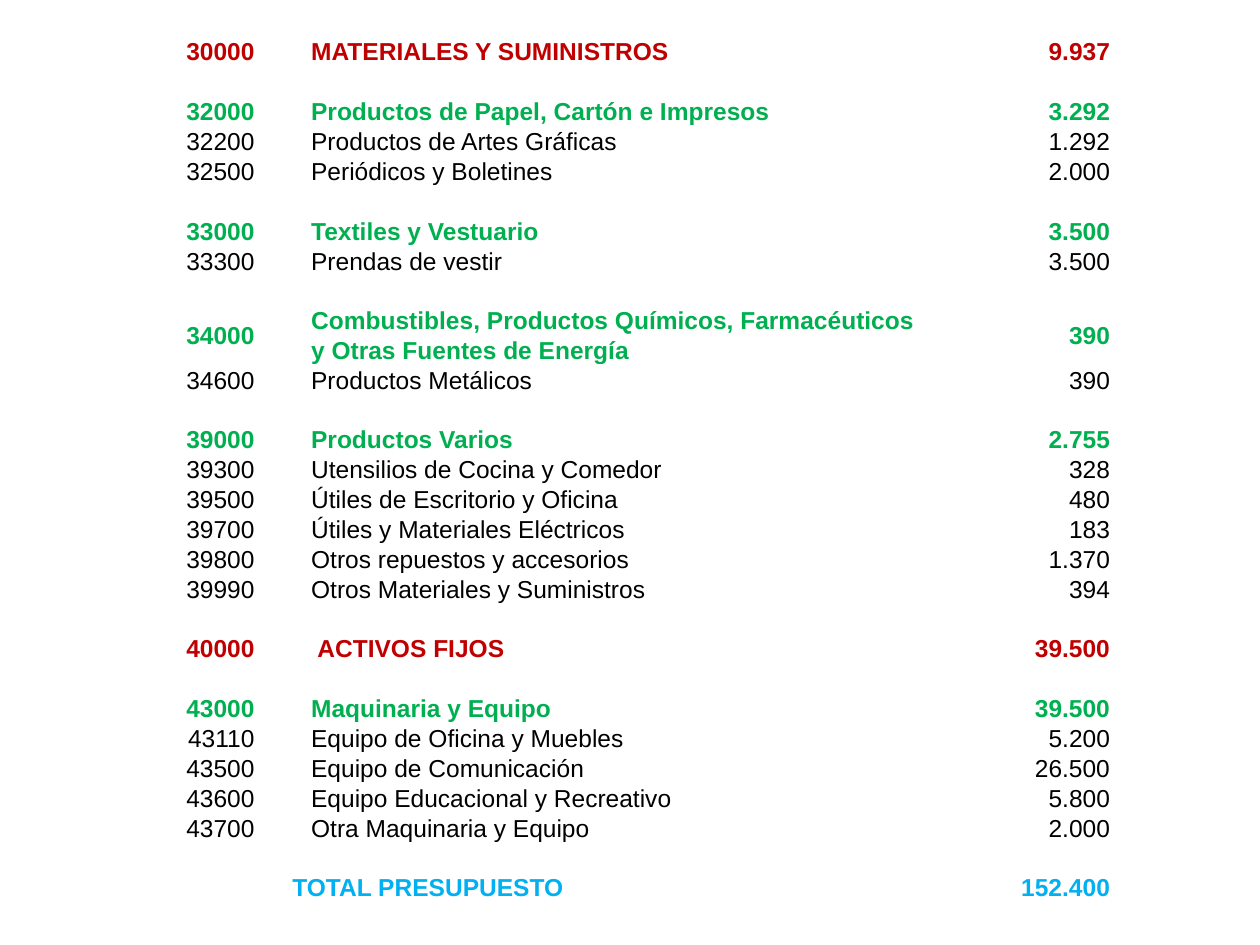
"""Build a budget slide with one table of accounts and amounts."""
import pptx
import pptx.util
import pptx.dml.color
import pptx.enum.text
import pptx.oxml.ns
from lxml import etree

Inches = pptx.util.Inches
Pt = pptx.util.Pt
RGBColor = pptx.dml.color.RGBColor
ALIGN = pptx.enum.text.PP_ALIGN

RED = RGBColor(0xC0, 0x00, 0x00)
GREEN = RGBColor(0x00, 0xB0, 0x50)
BLUE = RGBColor(0x00, 0xB0, 0xF0)
BLACK = RGBColor(0x00, 0x00, 0x00)

WIDTHS = [0.92, 0.37, 4.93, 1.49]
PAD = 0.04
LINE = Pt(17)
TALL = "34000"

GROUPS = [
    [("30000", "MATERIALES Y SUMINISTROS", "9.937")],
    [("32000", "Productos de Papel, Cartón e Impresos", "3.292"),
     ("32200", "Productos de Artes Gráficas", "1.292"),
     ("32500", "Periódicos y Boletines", "2.000")],
    [("33000", "Textiles y Vestuario", "3.500"),
     ("33300", "Prendas de vestir", "3.500")],
    [(TALL, "Combustibles, Productos Químicos, Farmacéuticos "
      "y Otras Fuentes de Energía", "390"),
     ("34600", "Productos Metálicos", "390")],
    [("39000", "Productos Varios", "2.755"),
     ("39300", "Utensilios de Cocina y Comedor", "328"),
     ("39500", "Útiles de Escritorio y Oficina", "480"),
     ("39700", "Útiles y Materiales Eléctricos", "183"),
     ("39800", "Otros repuestos y accesorios", "1.370"),
     ("39990", "Otros Materiales y Suministros", "394")],
    [("40000", "ACTIVOS FIJOS", "39.500")],
    [("43000", "Maquinaria y Equipo", "39.500"),
     ("43110", "Equipo de Oficina y Muebles", "5.200"),
     ("43500", "Equipo de Comunicación", "26.500"),
     ("43600", "Equipo Educacional y Recreativo", "5.800"),
     ("43700", "Otra Maquinaria y Equipo", "2.000")],
]
TOTAL = ("TOTAL PRESUPUESTO", "152.400")


def write(cell, text, size=14, face="Arial", color=BLACK, bold=False,
          align=ALIGN.LEFT, indent=0):
    cell.margin_left = Inches(PAD + indent)
    para = cell.text_frame.paragraphs[0]
    para.alignment = align
    para.line_spacing = 1.07
    run = para.add_run()
    run.text = text
    run.font.size = Pt(size)
    run.font.name = face
    run.font.bold = bold
    run.font.color.rgb = color


def rank(code):
    if code.endswith("0000"):
        return RED, True
    if code.endswith("000"):
        return GREEN, True
    return BLACK, False


class Deck:
    """Hold the presentation, its text size and the current slide."""

    def __init__(self, size=14):
        self.size = size
        self.show = pptx.Presentation()
        self.show.slide_width = Inches(10)
        self.show.slide_height = Inches(7.5)
        self.slide = self.show.slides.add_slide(self.show.slide_layouts[6])

    def table(self, left, top, widths, count):
        frame = self.slide.shapes.add_table(
            count, len(widths), Inches(left), Inches(top),
            Inches(sum(widths)), LINE * count)
        grid = frame.table
        grid.first_row = False
        grid.horz_banding = False
        for column, width in zip(grid.columns, widths):
            column.width = Inches(width)
        for row in grid.rows:
            row.height = LINE
        for cell in grid.iter_cells():
            cell.fill.background()
            cell.margin_left = cell.margin_right = Inches(PAD)
            cell.margin_top = cell.margin_bottom = 0
            cell.vertical_anchor = pptx.enum.text.MSO_ANCHOR.MIDDLE
        return grid

    def entry(self, grid, index, code, name, value):
        color, bold = rank(code)
        look = dict(size=self.size, color=color, bold=bold)
        indent = 0.05 if code == "40000" else 0
        write(grid.cell(index, 0), code, align=ALIGN.RIGHT, **look)
        write(grid.cell(index, 2), name, indent=indent, **look)
        write(grid.cell(index, 3), value, align=ALIGN.RIGHT, **look)
        if code == TALL:
            grid.rows[index].height = 2 * LINE

    def total(self, grid, index, name, value):
        look = dict(size=self.size, color=BLUE, bold=True)
        grid.cell(index, 0).merge(grid.cell(index, 2))
        write(grid.cell(index, 0), name, indent=1.14, **look)
        write(grid.cell(index, 3), value, align=ALIGN.RIGHT, **look)

    def blanks(self, grid):
        tag = pptx.oxml.ns.qn("a:endParaRPr")
        for cell in grid.iter_cells():
            para = cell.text_frame.paragraphs[0]
            if not para.runs:
                etree.SubElement(para._p, tag, sz=str(self.size * 100))


def main():
    deck = Deck()
    count = sum(len(group) + 1 for group in GROUPS) + 1
    grid = deck.table(1.14, 0.29, WIDTHS, count)
    index = 0
    for group in GROUPS:
        for item in group:
            deck.entry(grid, index, *item)
            index += 1
        index += 1
    deck.total(grid, index, *TOTAL)
    deck.blanks(grid)
    deck.show.save("out.pptx")


if __name__ == "__main__":
    main()
